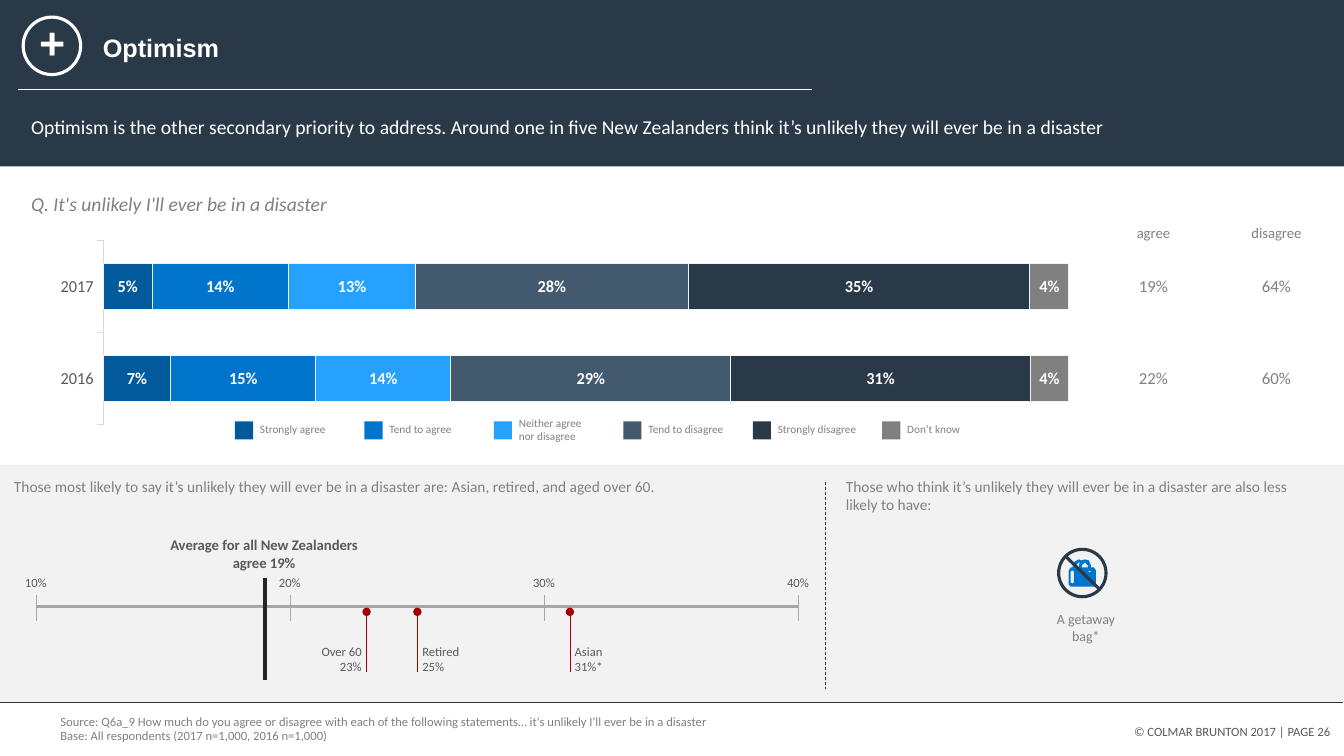
"""Build the Optimism survey slide with its chart, tables and scale."""
from dataclasses import dataclass
from typing import Any

from lxml.etree import SubElement
from pptx import Presentation
from pptx.chart.data import CategoryChartData as ChartData
from pptx.dml.color import RGBColor
from pptx.enum.chart import XL_CHART_TYPE as Kind, XL_LABEL_POSITION as Spot
from pptx.enum.chart import XL_TICK_LABEL_POSITION as Label, XL_TICK_MARK as Mark
from pptx.enum.dml import MSO_LINE as Dash
from pptx.enum.shapes import MSO_CONNECTOR as Link, MSO_SHAPE as Form
from pptx.enum.text import MSO_ANCHOR as Anchor, MSO_AUTO_SIZE as Auto, PP_ALIGN as Align
from pptx.oxml import parse_xml
from pptx.oxml.ns import nsdecls, qn
from pptx.util import Inches, Pt

NAVY, WHITE, GRAY, DARK, PALE = "2A3947", "FFFFFF", "808080", "595959", "F2F2F2"
RULE, RED, BLUE = "A6A6A6", "A20000", "0174CB"
PLAIN = "{2D5ABB26-0587-4C30-8999-92F81FD0307C}"
SIDES = {"l": Align.LEFT, "c": Align.CENTER, "r": Align.RIGHT}
Box = tuple[float, float, float, float]


@dataclass
class Text:
    box: Box
    words: str
    size: float
    tint: str = GRAY
    side: str = "l"
    mid: bool = False
    bold: bool = False
    slant: bool = False
    face: str = "Calibri"


@dataclass
class Line:
    ends: Box
    tint: str
    width: float = 0.5
    dash: bool = False
    dot: bool = False


@dataclass
class Answer:
    name: str
    tint: str
    vals: tuple[float, float]


@dataclass
class Group:
    name: str
    mark: str
    value: int
    side: str = "l"


@dataclass
class Cell:
    words: str
    size: float
    anchor: Any


ANSWERS = [
    Answer("Strongly agree", "015A9C", (0.07, 0.05)),
    Answer("Tend to agree", BLUE, (0.15, 0.14)),
    Answer("Neither agree\nnor disagree", "26A1FE", (0.14, 0.13)),
    Answer("Tend to disagree", "42596E", (0.29, 0.28)),
    Answer("Strongly disagree", NAVY, (0.31, 0.35)),
    Answer("Don’t know", GRAY, (0.04, 0.04)),
]
GROUPS = [Group("Over 60", "23%", 23, "r"), Group("Retired", "25%", 25),
          Group("Asian", "31%*", 31)]
BAG = [
    [(1060, 580), (1062, 582), (1085, 582), (1087, 580), (1087, 566), (1085, 563),
     (1082, 563), (1082, 561), (1080, 556), (1076, 555), (1073, 556), (1070, 555),
     (1066, 557), (1064, 561), (1064, 563), (1062, 563), (1060, 566)],
    [(1079, 563), (1073, 563), (1073, 561), (1076, 558), (1079, 561)],
    [(1070, 563), (1067, 563), (1067, 561), (1070, 558), (1071, 558), (1070, 561)],
    [(1070, 567), (1072, 566), (1073, 567), (1072, 568)],
    [(1079, 567), (1081, 566), (1082, 567), (1081, 568)],
    [(1065, 567), (1065, 578), (1064, 579), (1062, 578), (1062, 567), (1064, 566)],
]


def tone(code: str) -> RGBColor:
    return RGBColor.from_string(code)


def style(font: Any, size: float, tint: str, **more: Any) -> None:
    for key, val in {"size": Pt(size), "name": "Calibri", **more}.items():
        setattr(font, key, val)
    font.color.rgb = tone(tint)


def write(frame: Any, text: Text) -> None:
    looks = {"word_wrap": True,
             "vertical_anchor": Anchor.MIDDLE if text.mid else Anchor.TOP,
             "auto_size": Auto.NONE if text.mid else Auto.SHAPE_TO_FIT_TEXT}
    for key, val in looks.items():
        setattr(frame, key, val)
    for i, words in enumerate(text.words.split("\n")):
        para = frame.add_paragraph() if i else frame.paragraphs[0]
        para.alignment = SIDES[text.side]
        if text.mid:
            para.line_spacing = 0.9
        run = para.add_run()
        run.text = words
        style(run.font, text.size, text.tint, name=text.face, bold=text.bold,
              italic=text.slant)


def put(shapes: Any, text: Text) -> None:
    write(shapes.add_textbox(*map(Inches, text.box)).text_frame, text)


def shape(shapes: Any, form: Any, box: Box, fill: str = "", edge: str = "") -> None:
    item = shapes.add_shape(form, *map(Inches, box))
    item.shadow.inherit = False
    for part, code in ((item.fill, fill), (item.line.fill, edge)):
        if code:
            part.solid()
            part.fore_color.rgb = tone(code)
        else:
            part.background()
    if edge:
        item.line.width = Pt(2.25)


def rule(shapes: Any, line: Line) -> None:
    item = shapes.add_connector(Link.STRAIGHT, *map(Inches, line.ends))
    item.line.color.rgb = tone(line.tint)
    item.line.width = Pt(line.width)
    if line.dash:
        item.line.dash_style = Dash.DASH
    if line.dot:
        SubElement(item.line._get_or_add_ln(), qn("a:tailEnd"), type="oval")
    SubElement(item._element.spPr, qn("a:effectLst"))


def grid(shapes: Any, box: Box, rows: list[list[Cell]], tall: list[float]) -> None:
    table = shapes.add_table(len(rows), len(rows[0]), *map(Inches, box)).table
    table.first_row = table.horz_banding = False
    table._tbl.tblPr.find(qn("a:tableStyleId")).text = PLAIN
    for r, row in enumerate(rows):
        table.rows[r].height = Inches(tall[r])
        for c, cell in enumerate(row):
            spot = table.cell(r, c)
            spot.fill.background()
            spot.text = cell.words
            spot.vertical_anchor = cell.anchor
            para = spot.text_frame.paragraphs[0]
            para.alignment = Align.CENTER
            style(para.runs[0].font, cell.size, GRAY)


def graph(shapes: Any, box: Box) -> None:
    data = ChartData(number_format="0%")
    data.categories = ["2016", "2017"]
    for i, item in enumerate(ANSWERS, 1):
        data.add_series(f"Series {i}", item.vals)
    chart = shapes.add_chart(Kind.BAR_STACKED_100, *map(Inches, box), data).chart
    chart.has_legend = chart.has_title = False
    style(chart.font, 10, "000000")
    years, share = chart.category_axis, chart.value_axis
    years.major_tick_mark, years.tick_label_position = Mark.OUTSIDE, Label.LOW
    years.format.line.color.rgb = tone("D9D9D9")
    years.format.line.width = Pt(0.75)
    style(years.tick_labels.font, 12, DARK)
    share.visible = share.has_major_gridlines = False
    share.minimum_scale, share.maximum_scale = 0, 1
    plot = chart.plots[0]
    plot.gap_width, plot.overlap, plot.vary_by_categories = 100, 100, False
    for bar, item in zip(plot.series, ANSWERS):
        bar.format.fill.solid()
        bar.format.fill.fore_color.rgb = tone(item.tint)
        bar.format.line.color.rgb = tone(PALE)
        bar.format.line.width = Pt(0.75)
        looks = {"show_value": True, "position": Spot.CENTER, "number_format": "0%",
                 "number_format_is_linked": False}
        for key, val in looks.items():
            setattr(bar.data_labels, key, val)
        style(bar.data_labels.font, 12, WHITE, bold=True)
    area = chart._chartSpace.chart.plotArea
    for old in area.findall(qn("c:layout")):
        area.remove(old)
    sizes = {"x": 0.014, "y": 0.155, "w": 0.966, "h": 0.845}
    modes = '<c:layoutTarget val="inner"/><c:xMode val="edge"/><c:yMode val="edge"/>'
    spans = "".join(f'<c:{key} val="{val}"/>' for key, val in sizes.items())
    area.insert(0, parse_xml(f'<c:layout {nsdecls("c")}><c:manualLayout>{modes}{spans}'
                             "</c:manualLayout></c:layout>"))


def draw_bag(shapes: Any) -> None:
    pen = shapes.build_freeform(*BAG[0][0], scale=Inches(0.01))
    for i, ring in enumerate(BAG):
        if i:
            pen.move_to(*ring[0])
        pen.add_line_segments(ring[1:], close=True)
    bag = pen.convert_to_shape()
    bag.shadow.inherit = False
    bag.fill.solid()
    bag.fill.fore_color.rgb = tone(BLUE)
    bag.line.fill.background()
    shape(shapes, Form.OVAL, (10.5, 5.45, 0.47, 0.47), edge=NAVY)
    rule(shapes, Line((10.57, 5.52, 10.91, 5.85), NAVY, 2.25))


def draw_scale(shapes: Any) -> None:
    def place(value: int) -> float:
        return 0.36 + 0.252 * (value - 10)

    for value in range(10, 41, 10):
        x = place(value)
        put(shapes, Text((x - 0.24, 5.65, 0.47, 0.25), f"{value}%", 9, DARK, "c"))
        rule(shapes, Line((x, 5.9, x, 6.16), RULE))
    rule(shapes, Line((place(10), 6.02, place(40), 6.02), RULE, 2.25))
    rule(shapes, Line((place(19), 5.73, place(19), 6.75), "262626", 2.25))
    put(shapes, Text((1.37, 5.27, 2.5, 0.45), "Average for all New Zealanders\nagree 19%",
                     10.5, DARK, "c", bold=True))
    for group in GROUPS:
        x = place(group.value)
        left = x - 1.19 if group.side == "r" else x - 0.05
        rule(shapes, Line((x, 6.67, x, 6.07), RED, dot=True))
        put(shapes, Text((left, 6.34, 1.24, 0.4), f"{group.name}\n{group.mark}", 9, DARK,
                         group.side))


def main() -> None:
    deck = Presentation()
    deck.slide_width, deck.slide_height = Inches(13.33), Inches(7.5)
    shapes = deck.slides.add_slide(deck.slide_layouts[5]).shapes
    for box, fill in (((0, 0, 13.33, 1.65), NAVY), ((0, 7.2, 13.33, 0.3), WHITE),
                      ((0, 4.61, 13.33, 2.36), PALE)):
        shape(shapes, Form.RECTANGLE, box, fill)
    for line in (Line((-0.01, 6.97, 13.32, 6.97), NAVY), Line((0.18, 0.89, 8.05, 0.89), WHITE),
                 Line((8.19, 4.78, 8.19, 6.84), NAVY, dash=True)):
        rule(shapes, line)
    head = Text((0.92, 0.16, 11.5, 0.66), "Optimism", 18, WHITE, mid=True, bold=True, face="Arial")
    title = shapes.title
    title.left, title.top, title.width, title.height = map(Inches, head.box)
    write(title.text_frame, head)
    shapes._spTree.append(title._element)
    shape(shapes, Form.OVAL, (0.23, 0.17, 0.57, 0.57), edge=WHITE)
    for text in (
        Text((9.35, 7.13, 3.94, 0.25), "© COLMAR BRUNTON 2017 | PAGE 26", 9, DARK, "r"),
        Text((0.5, 7.11, 8.49, 0.26), "Source: Q6a_9 How much do you agree or disagree with each of "
             "the following statements… it's unlikely I'll ever be in a disaster\n"
             "Base: All respondents (2017 n=1,000, 2016 n=1,000)", 9, mid=True),
        Text((0.29, 0.09, 0.61, 0.72), "+", 32, WHITE, mid=True, bold=True, face="Arial"),
        Text((0.21, 1.91, 7.8, 0.26), "Q. It's unlikely I'll ever be in a disaster", 14,
             mid=True, slant=True),
        Text((0.21, 0.91, 12.27, 0.72), "Optimism is the other secondary priority to address. Around "
             "one in five New Zealanders think it’s unlikely they will ever be in a disaster", 14,
             WHITE, mid=True),
        Text((0.04, 4.68, 8.06, 0.29), "Those most likely to say it’s unlikely they will ever be in "
             "a disaster are: Asian, retired, and aged over 60.", 11),
        Text((8.29, 4.68, 4.71, 0.47), "Those who think it’s unlikely they will ever be in a "
             "disaster are also less likely to have:", 11),
    ):
        put(shapes, text)
    graph(shapes, (0.6, 2.05, 10.2, 2.17))
    rows = [(("agree", "disagree"), 10.5, Anchor.MIDDLE), (("19%", "64%"), 12, Anchor.TOP),
            (("22%", "60%"), 12, Anchor.BOTTOM)]
    grid(shapes, (10.83, 1.94, 2.44, 1.97),
         [[Cell(word, size, spot) for word in words] for words, size, spot in rows],
         [0.75, 0.61, 0.61])
    for i, item in enumerate(ANSWERS):
        x = 2.33 + 1.284 * i
        shape(shapes, Form.RECTANGLE, (x, 4.18, 0.18, 0.18), item.tint)
        put(shapes, Text((x + 0.15, 4.14, 1.4, 0.26), item.name, 8, mid=True))
    draw_scale(shapes)
    grid(shapes, (10.27, 6.01, 1, 0.6), [[Cell("A getaway bag*", 10, Anchor.TOP)]], [0.6])
    draw_bag(shapes)
    deck.save("out.pptx")


if __name__ == "__main__":
    main()
